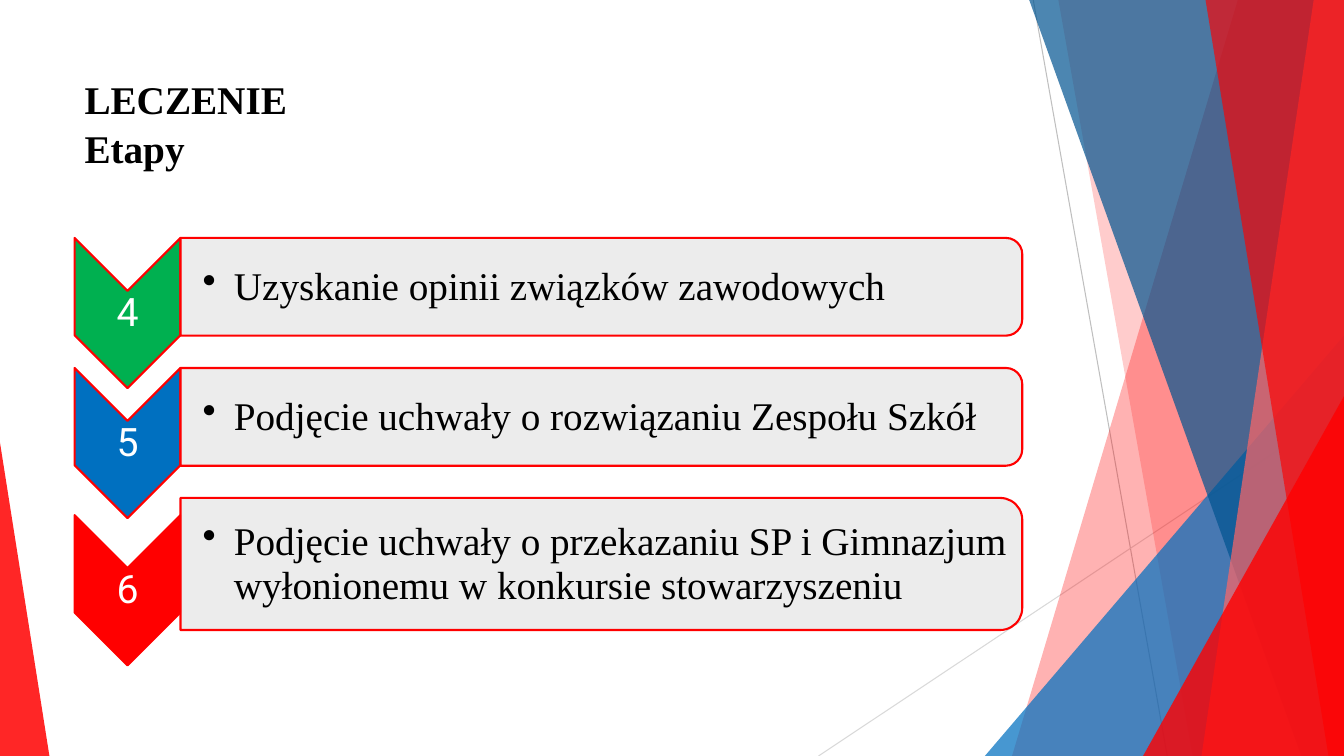
from dataclasses import dataclass

from lxml import etree
from pptx import Presentation
from pptx import util as u
from pptx.dml.color import RGBColor
from pptx.enum import shapes, text
from pptx.oxml.ns import qn


@dataclass(frozen=True)
class Theme:
    """Colours, fonts and type sizes of the deck."""
    red: str = "FF0000"
    coral: str = "FF6666"
    blue: str = "0070C0"
    navy: str = "005490"
    green: str = "00B050"
    panel: str = "EBEBEB"
    ink: str = "000000"
    white: str = "FFFFFF"
    line_dark: str = "BFBFBF"
    line_light: str = "D9D9D9"
    serif: str = "Times New Roman"
    sans: str = "Roboto"
    size: int = 28
    outline: float = 1.5
    hairline: float = 0.75


THEME = Theme()
WIDTH, HEIGHT = u.Inches(13.333), u.Inches(7.5)
CHEVRON_LEFT, CHEVRON_WIDTH, CHEVRON_HEIGHT = 5.55, 7.88, 19.87
PANEL_LEFT, PANEL_WIDTH = 13.43, 62.63
FIRST_ROW, ROW_PITCH, ROW_HEIGHT, TALL_ROW = 31.47, 17.2, 12.93, 17.47


def across(share):
    """Turn a percentage of the slide width into a length."""
    return round(WIDTH * share / 100)


def down(share):
    """Turn a percentage of the slide height into a length."""
    return round(HEIGHT * share / 100)


def paint(shape, colour, opacity=100, outline=None):
    """Fill a shape, with optional transparency and outline."""
    shape.shadow.inherit = False
    shape.fill.solid()
    shape.fill.fore_color.rgb = RGBColor.from_string(colour)
    if opacity < 100:
        tint = shape.fill._xPr.find(qn("a:solidFill"))[0]
        etree.SubElement(tint, qn("a:alpha")).set("val", str(opacity * 1000))
    if outline:
        shape.line.color.rgb = RGBColor.from_string(outline)
        shape.line.width = u.Pt(THEME.outline)
    else:
        shape.line.fill.background()


def add_hairline(page, start, end, colour):
    """Draw a thin straight line between two points."""
    line = page.shapes.add_connector(
        shapes.MSO_CONNECTOR.STRAIGHT,
        across(start[0]), down(start[1]), across(end[0]), down(end[1]))
    line.line.color.rgb = RGBColor.from_string(colour)
    line.line.width = u.Pt(THEME.hairline)
    etree.SubElement(line._element.spPr, qn("a:effectLst"))


def add_band(page, top_left, bottom_left, colour, opacity):
    """Draw a slanted band that reaches the right edge of the slide."""
    outline = page.shapes.build_freeform(across(top_left), 0)
    outline.add_line_segments(
        [(WIDTH, 0), (WIDTH, HEIGHT), (across(bottom_left), HEIGHT)])
    paint(outline.convert_to_shape(), colour, opacity)


def add_wedge(page, left, right, top, apex, colour, opacity):
    """Draw a triangle that stands on the bottom of the slide."""
    wedge = page.shapes.add_shape(
        shapes.MSO_SHAPE.ISOSCELES_TRIANGLE, across(left), down(top),
        across(right - left), HEIGHT - down(top))
    wedge.adjustments[0] = apex
    paint(wedge, colour, opacity)


def add_turned(page, kind, left, top, width, height, colour, opacity=100):
    """Draw an outlined shape turned a quarter so that it covers the given area."""
    wide, high = across(width), down(height)
    shift = (wide - high) // 2
    shape = page.shapes.add_shape(
        kind, across(left) + shift, down(top) - shift, high, wide)
    shape.rotation = 90
    paint(shape, colour, opacity, THEME.red)


def add_text(page, area, words, font, colour, spacing, inset=0.02,
             anchor=text.MSO_ANCHOR.MIDDLE, bold=False):
    """Add a wrapped text box and return its paragraph."""
    left, top, width, height = area
    box = page.shapes.add_textbox(
        across(left), down(top), across(width), down(height))
    frame = box.text_frame
    frame.word_wrap = True
    frame.vertical_anchor = anchor
    frame.margin_left = u.Inches(inset)
    frame.margin_top = frame.margin_right = frame.margin_bottom = u.Inches(0.02)
    para = frame.paragraphs[0]
    para.text = words
    para.line_spacing = spacing
    for span in para.runs:
        span.font.name = font
        span.font.size = u.Pt(THEME.size)
        span.font.bold = bold
        span.font.color.rgb = RGBColor.from_string(colour)
    return para


def add_bullet(para):
    """Give a paragraph a round bullet with a hanging indent."""
    properties = para._p.get_or_add_pPr()
    indent = u.Inches(0.31)
    properties.set("marL", str(indent))
    properties.set("indent", str(-indent))
    etree.SubElement(properties, qn("a:buChar")).set("char", "•")


def add_step(page, top, height, number, words, colour):
    """Add one numbered chevron with its panel."""
    chevron_top = top + (height - ROW_HEIGHT) / 2
    add_turned(page, shapes.MSO_SHAPE.CHEVRON, CHEVRON_LEFT, chevron_top,
               CHEVRON_WIDTH, CHEVRON_HEIGHT, colour)
    digit = add_text(page, (CHEVRON_LEFT, chevron_top + 7, CHEVRON_WIDTH, 6),
                     number, THEME.sans, THEME.white, 0.9)
    digit.alignment = text.PP_ALIGN.CENTER
    add_turned(page, shapes.MSO_SHAPE.ROUND_2_SAME_RECTANGLE, PANEL_LEFT, top,
               PANEL_WIDTH, height, THEME.panel, 90)
    add_bullet(add_text(page, (PANEL_LEFT, top + 0.6, PANEL_WIDTH - 0.4, height - 1.2),
                        words, THEME.serif, THEME.ink, 0.95, inset=0.22))


def add_backdrop(page):
    """Draw the hairlines, bands and wedges around the content."""
    add_hairline(page, (76.88, 0), (86.85, 100), THEME.line_dark)
    add_hairline(page, (100, 53.73), (60.9, 100), THEME.line_light)
    add_band(page, 92.1, 75.3, THEME.red, 30)
    add_band(page, 78.75, 88.75, THEME.red, 20)
    add_wedge(page, 73.28, 100, 44.4, 1, THEME.blue, 72)
    add_band(page, 76.58, 96.83, THEME.navy, 70)
    add_band(page, 97.75, 89.4, THEME.coral, 70)
    add_band(page, 89.7, 98.85, THEME.red, 65)
    add_wedge(page, 85.05, 100, 52.4, 1, THEME.red, 80)
    add_wedge(page, 0, 3.68, 58.53, 0, THEME.red, 85)


def main():
    """Build the slide and save it."""
    deck = Presentation()
    deck.slide_width, deck.slide_height = WIDTH, HEIGHT
    page = deck.slides.add_slide(deck.slide_layouts[6])
    add_backdrop(page)
    add_text(page, (5.55, 9.4, 70.5, 18.8), "LECZENIE\vEtapy", THEME.serif,
             THEME.ink, 1.04, inset=0.1, anchor=text.MSO_ANCHOR.TOP, bold=True)
    steps = [
        ("4", "Uzyskanie opinii związków zawodowych", THEME.green, ROW_HEIGHT),
        ("5", "Podjęcie uchwały o rozwiązaniu Zespołu Szkół", THEME.blue, ROW_HEIGHT),
        ("6", "Podjęcie uchwały o przekazaniu SP i Gimnazjum wyłonionemu "
              "w konkursie stowarzyszeniu", THEME.red, TALL_ROW),
    ]
    for row, (number, words, colour, height) in enumerate(steps):
        add_step(page, FIRST_ROW + row * ROW_PITCH, height, number, words, colour)
    deck.save("out.pptx")


if __name__ == "__main__":
    main()
